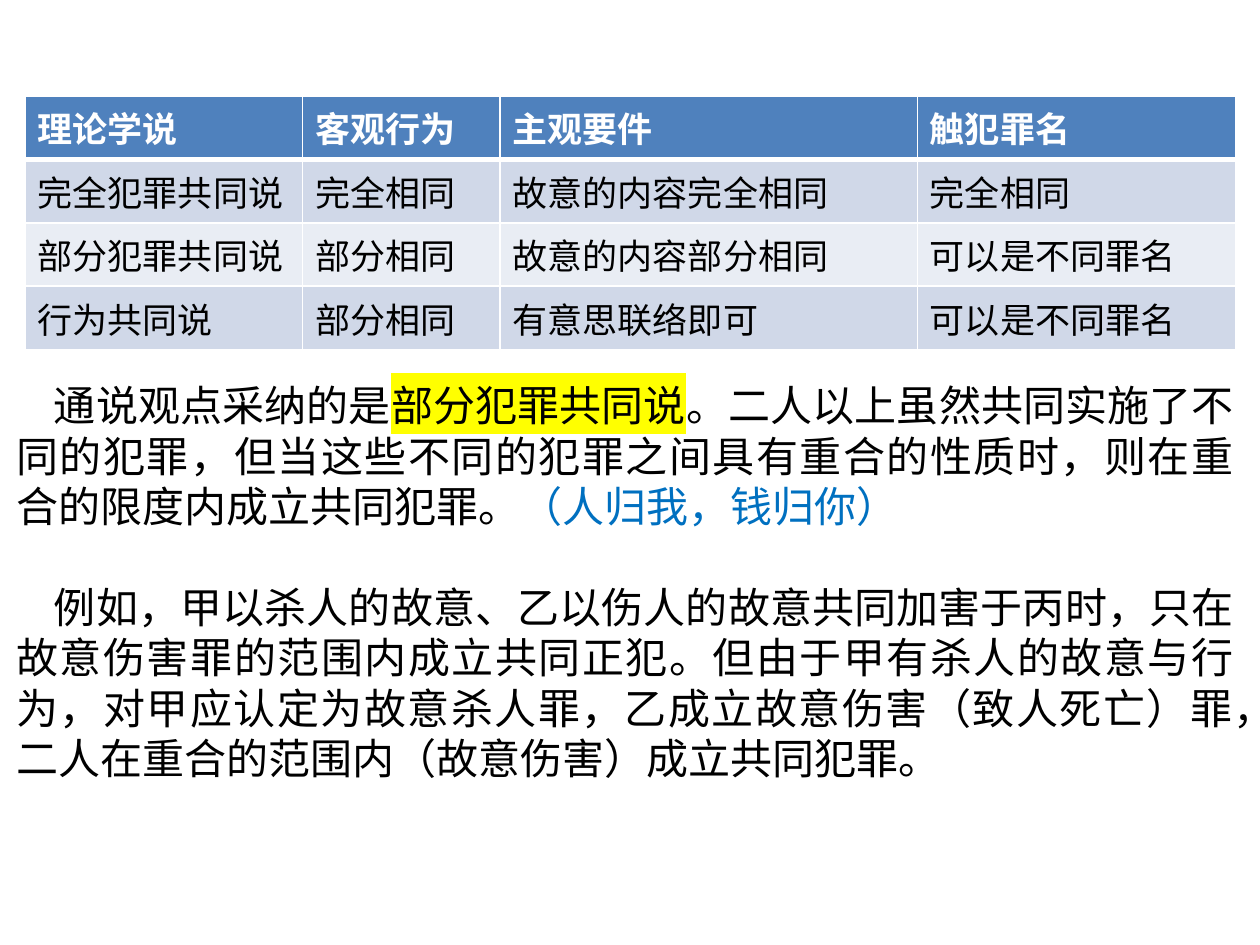
from lxml.etree import SubElement
from pptx import Presentation
from pptx.dml.color import RGBColor
from pptx.enum.text import MSO_ANCHOR, PP_ALIGN
from pptx.oxml.ns import qn
from pptx.util import Pt

ROWS = [
    ("理论学说", "客观行为", "主观要件", "触犯罪名"),
    ("完全犯罪共同说", "完全相同", "故意的内容完全相同", "完全相同"),
    ("部分犯罪共同说", "部分相同", "故意的内容部分相同", "可以是不同罪名"),
    ("行为共同说", "部分相同", "有意思联络即可", "可以是不同罪名"),
]
# Each paragraph is a list of (text, colour, highlight) runs.
NOTES = [
    [
        ("通说观点采纳的是", "ink", None),
        ("部分犯罪共同说", "ink", "mark"),
        ("。二人以上虽然共同实施了不同的犯罪，但当这些不同的犯罪之间具有重合的性质时，"
         "则在重合的限度内成立共同犯罪。", "ink", None),
        ("（人归我，钱归你）", "blue", None),
    ],
    [
        ("例如，甲以杀人的故意、乙以伤人的故意共同加害于丙时，只在故意伤害罪的范围内成立共同正犯。"
         "但由于甲有杀人的故意与行为，对甲应认定为故意杀人罪，乙成立故意伤害（致人死亡）罪，"
         "二人在重合的范围内（故意伤害）成立共同犯罪。", "ink", None),
    ],
]
THEME = {
    "font": "Noto Sans CJK SC", "cell": 20, "body": 24,
    "ink": "000000", "white": "FFFFFF", "blue": "0070C0", "mark": "FFFF00",
    "head": "4F81BD", "bands": ("E9EDF4", "D0D8E8"),
}
WIDTHS = (158.4, 113, 238.4, 181.8)
ROW_HIGH = 31
LEAD = THEME["body"] * 1.2


def add_run(para, text, size, color, bold=False, mark=None):
    run = para.add_run()
    run.text = text
    font = run.font
    font.size, font.bold = Pt(THEME[size]), bold
    font.color.rgb = RGBColor.from_string(THEME[color])
    props = run._r.get_or_add_rPr()
    if mark:
        light = SubElement(props, qn("a:highlight"))
        SubElement(light, qn("a:srgbClr"), val=THEME[mark])
    for tag in ("a:latin", "a:ea"):
        SubElement(props, qn(tag), typeface=THEME["font"])


def add_edges(cell, top, bottom):
    """Draw white cell borders, with the top and bottom widths in points."""
    props = cell._tc.get_or_add_tcPr()
    for side, wide in (("L", 1), ("R", 1), ("T", top), ("B", bottom)):
        line = SubElement(props, qn(f"a:ln{side}"), w=str(Pt(wide)))
        fill = SubElement(line, qn("a:solidFill"))
        SubElement(fill, qn("a:srgbClr"), val=THEME["white"])


def add_grid(slide):
    frame = slide.shapes.add_table(
        len(ROWS), len(WIDTHS), Pt(14.4), Pt(54.8),
        Pt(sum(WIDTHS)), Pt(ROW_HIGH * len(ROWS)))
    table = frame.table
    for col, wide in zip(table.columns, WIDTHS):
        col.width = Pt(wide)
    for r, row in enumerate(ROWS):
        head = r == 0
        for c, text in enumerate(row):
            cell = table.cell(r, c)
            add_edges(cell, 3 if r == 1 else 1, 3 if head else 1)
            cell.fill.solid()
            shade = THEME["head"] if head else THEME["bands"][r % 2]
            cell.fill.fore_color.rgb = RGBColor.from_string(shade)
            cell.vertical_anchor = MSO_ANCHOR.MIDDLE
            add_run(cell.text_frame.paragraphs[0], text, "cell",
                    "white" if head else "ink", head)


def add_notes(slide):
    box = slide.shapes.add_textbox(Pt(2.2), Pt(196.6), Pt(710), Pt(254))
    frame = box.text_frame
    frame.word_wrap = True
    frame.margin_top = Pt(20.3)
    for i, runs in enumerate(NOTES):
        para = frame.add_paragraph() if i else frame.paragraphs[0]
        para.alignment = PP_ALIGN.JUSTIFY
        para.line_spacing = Pt(LEAD)
        para.space_before = Pt(LEAD if i else 0)
        para._p.get_or_add_pPr().set("indent", str(Pt(21.5)))
        for text, color, mark in runs:
            add_run(para, text, "body", color, mark=mark)


def main():
    deck = Presentation()
    deck.slide_width, deck.slide_height = Pt(720), Pt(540)
    slide = deck.slides.add_slide(deck.slide_layouts[6])
    add_grid(slide)
    add_notes(slide)
    deck.save("out.pptx")


if __name__ == "__main__":
    main()
